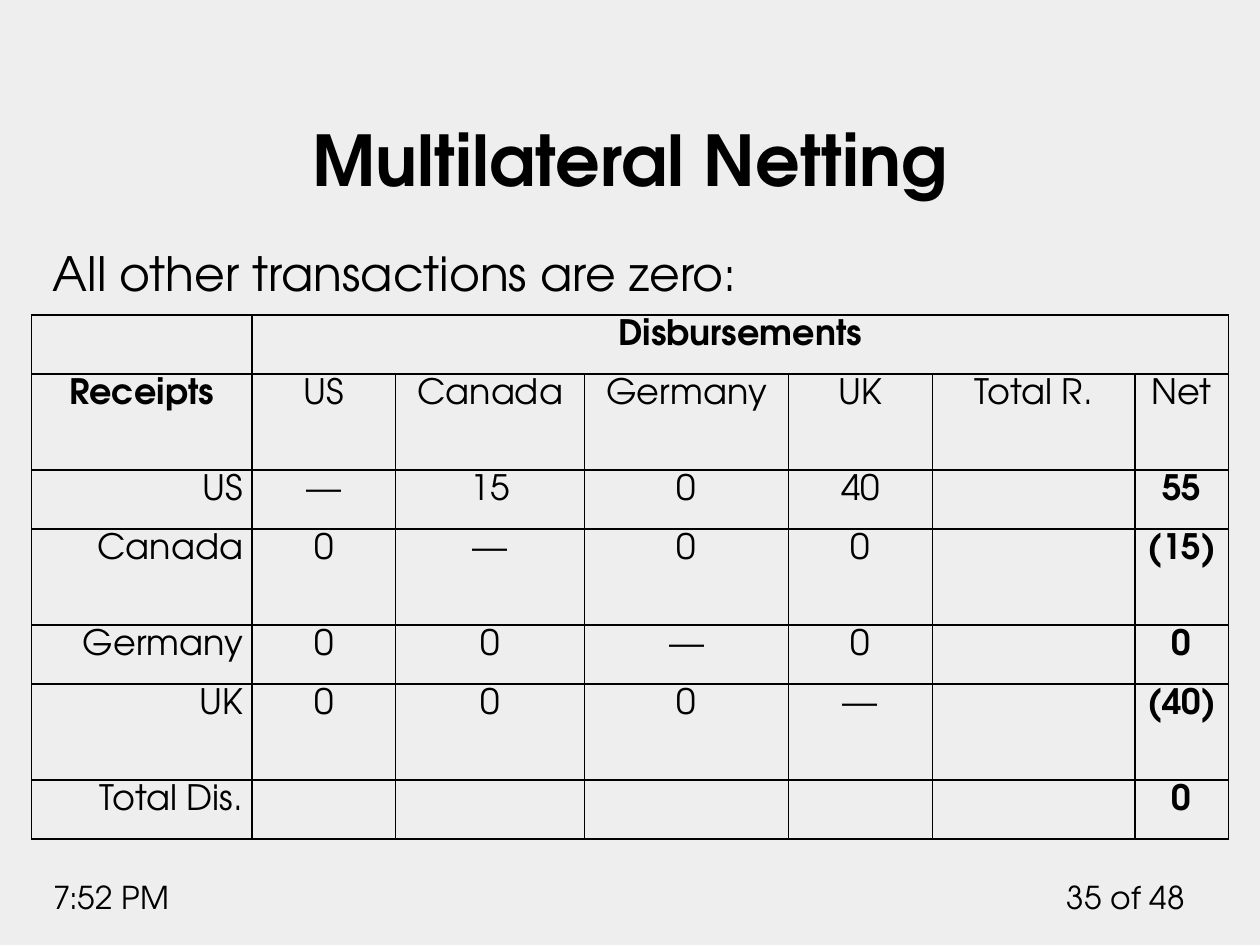
"""Build the multilateral netting slide with its table of receipts and disbursements."""
from dataclasses import dataclass

from lxml import etree
from pptx import Presentation
from pptx.dml.color import RGBColor
from pptx.enum import text
from pptx.oxml import ns
from pptx.util import Inches, Pt

FONT = "TeX Gyre Adventor"
COLORS = {"background": "EEEEEE", "ink": "000000"}
LEFT, CENTER, RIGHT = text.PP_ALIGN.LEFT, text.PP_ALIGN.CENTER, text.PP_ALIGN.RIGHT
TOP, BOTTOM = text.MSO_ANCHOR.TOP, text.MSO_ANCHOR.BOTTOM


@dataclass(frozen=True)
class Label:
    words: str
    left: float
    top: float
    width: float
    height: float
    size: float
    align: text.PP_ALIGN = LEFT
    anchor: text.MSO_ANCHOR = TOP
    bold: bool = False


LABELS = [
    Label("35 of 48", 8.33, 6.92, 1.17, 0.4, 18, RIGHT),
    Label("7:52 PM", 0.33, 6.92, 1.58, 0.4, 18),
    Label("All other transactions are zero:", 0.32, 1.89, 9.35, 0.53, 27),
    Label("Multilateral Netting", 0.5, 0.39, 9, 1.25, 40, CENTER, BOTTOM, True),
]
COLUMN_WIDTHS = [1.75, 1.14, 1.5, 1.62, 1.14, 1.61, 0.74]
SHORT_ROW, TALL_ROW = 0.47, 0.76
NETTING = [
    ["", "Disbursements", "", "", "", "", ""],
    ["Receipts", "US", "Canada", "Germany", "UK", "Total R.", "Net"],
    ["US", "—", "15", "0", "40", "", "55"],
    ["Canada", "0", "—", "0", "0", "", "(15)"],
    ["Germany", "0", "0", "—", "0", "", "0"],
    ["UK", "0", "0", "0", "—", "", "(40)"],
    ["Total Dis.", "", "", "", "", "", "0"],
]


def style_paragraph(p, size: float, align: text.PP_ALIGN, bold: bool) -> None:
    """Set the alignment and font of a paragraph."""
    p.alignment = align
    p.font.name = FONT
    p.font.size = Pt(size)
    p.font.bold = bold
    p.font.color.rgb = RGBColor.from_string(COLORS["ink"])


def add_label(s, label: Label) -> None:
    """Add a text box with one paragraph."""
    sp = s.shapes.add_textbox(
        Inches(label.left), Inches(label.top), Inches(label.width), Inches(label.height)
    )
    tf = sp.text_frame
    tf.word_wrap = True
    tf.vertical_anchor = label.anchor
    tf.text = label.words
    style_paragraph(tf.paragraphs[0], label.size, label.align, label.bold)


def add_borders(cell) -> None:
    """Draw a one-point line on each side of a cell."""
    tc_pr = cell._tc.get_or_add_tcPr()
    for i, side in enumerate(("lnL", "lnR", "lnT", "lnB")):
        ln = etree.Element(ns.qn(f"a:{side}"), w=str(Pt(1)))
        fill = etree.SubElement(ln, ns.qn("a:solidFill"))
        etree.SubElement(fill, ns.qn("a:srgbClr"), val=COLORS["ink"])
        tc_pr.insert(i, ln)


def fill_cell(cell, words: str, align: text.PP_ALIGN, bold: bool) -> None:
    """Write and style one table cell."""
    cell.fill.background()
    add_borders(cell)
    cell.margin_left = cell.margin_right = Inches(0.07)
    cell.margin_top = cell.margin_bottom = 0
    cell.text = words
    p = cell.text_frame.paragraphs[0]
    p.line_spacing = 1.15
    style_paragraph(p, 20, align, bold)


def add_netting_table(s) -> None:
    """Add the table of receipts and disbursements."""
    heights = [TALL_ROW if r % 2 else SHORT_ROW for r in range(len(NETTING))]
    table = s.shapes.add_table(
        len(NETTING), len(COLUMN_WIDTHS), Inches(0.25), Inches(2.5),
        Inches(sum(COLUMN_WIDTHS)), Inches(sum(heights)),
    ).table
    table.first_row = table.horz_banding = False
    for column, width in zip(table.columns, COLUMN_WIDTHS):
        column.width = Inches(width)
    last = len(COLUMN_WIDTHS) - 1
    for r, (values, height) in enumerate(zip(NETTING, heights)):
        table.rows[r].height = Inches(height)
        for c, words in enumerate(values):
            align = RIGHT if c == 0 and r > 1 else CENTER
            bold = r == 0 or (r == 1 and c == 0) or (r > 1 and c == last)
            fill_cell(table.cell(r, c), words, align, bold)
    table.cell(0, 1).merge(table.cell(0, last))


def main() -> None:
    """Build and save the slide."""
    prs = Presentation()
    prs.slide_width, prs.slide_height = Inches(10), Inches(7.5)
    s = prs.slides.add_slide(prs.slide_layouts[6])
    s.background.fill.solid()
    s.background.fill.fore_color.rgb = RGBColor.from_string(COLORS["background"])
    for label in LABELS:
        add_label(s, label)
    add_netting_table(s)
    prs.save("out.pptx")


if __name__ == "__main__":
    main()
